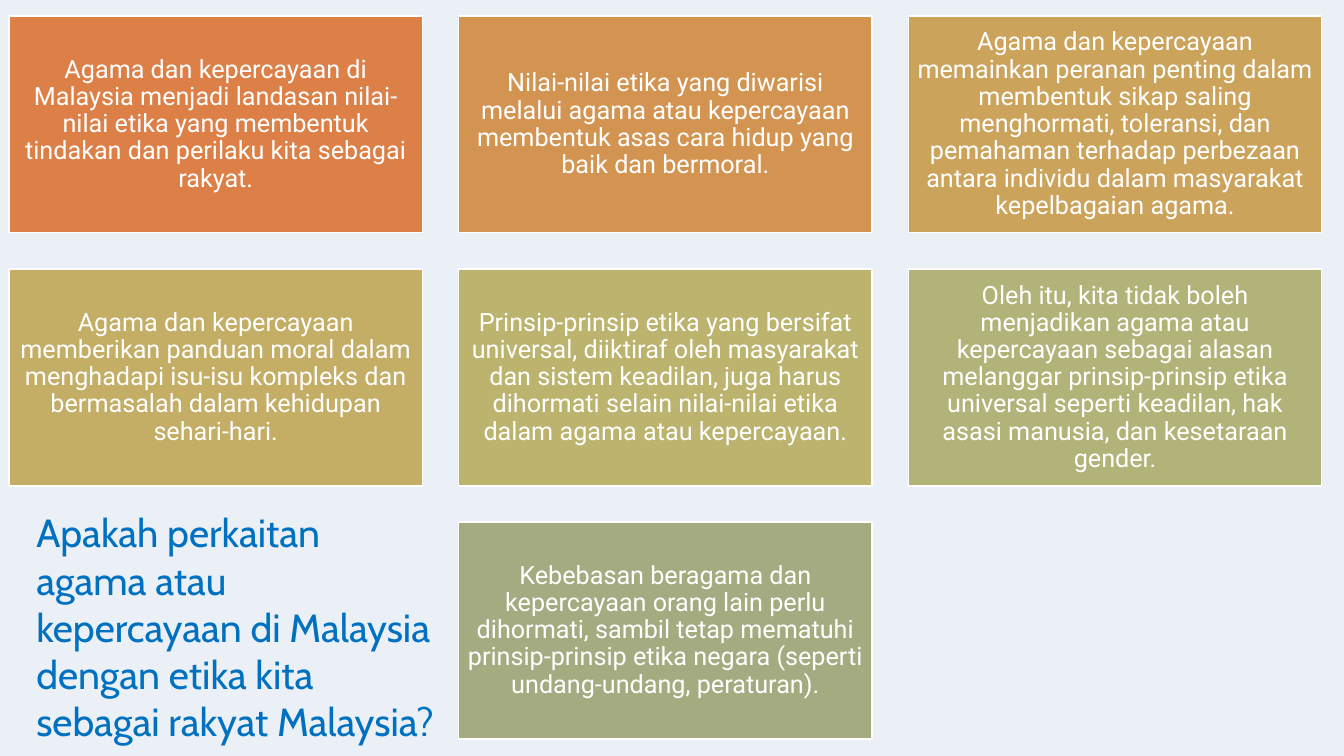
from dataclasses import dataclass

from pptx import Presentation
from pptx.dml.color import RGBColor
from pptx.enum.shapes import MSO_SHAPE
from pptx.enum.text import MSO_ANCHOR, MSO_AUTO_SIZE, PP_ALIGN
from pptx.util import Inches, Pt

RECT = MSO_SHAPE.RECTANGLE
MIDDLE = MSO_ANCHOR.MIDDLE
NO_AUTOFIT = MSO_AUTO_SIZE.NONE
LEFT, CENTER = PP_ALIGN.LEFT, PP_ALIGN.CENTER


@dataclass(frozen=True)
class Theme:
    background: str = "EAF0F6"
    white: str = "FFFFFF"
    title: str = "0070C0"
    cards: tuple = ("DD8047", "D49451", "CCA35B", "C4AD64", "BBB36E", "B2B378", "A5AB81")
    title_font: str = "Cabin"
    card_font: str = "Roboto"
    title_size: int = 28
    card_size: int = 18


theme = Theme()


def rgb(code):
    return RGBColor.from_string(code)


def format_text(sp, font, size, color, align, margins):
    """Style the shape's only paragraph; margins run left, top, right, bottom."""
    tf = sp.text_frame
    tf.word_wrap = True
    tf.auto_size = NO_AUTOFIT
    tf.vertical_anchor = MIDDLE
    tf.margin_left, tf.margin_top, tf.margin_right, tf.margin_bottom = map(Inches, margins)
    p = tf.paragraphs[0]
    p.alignment = align
    p.font.name = font
    p.font.size = Pt(size)
    p.font.color.rgb = rgb(color)
    return p


points = [
    "Agama dan kepercayaan di Malaysia menjadi landasan nilai-nilai etika yang membentuk "
    "tindakan dan perilaku kita sebagai rakyat.",
    "Nilai-nilai etika yang diwarisi melalui agama atau kepercayaan membentuk asas cara hidup "
    "yang baik dan bermoral.",
    "Agama dan kepercayaan memainkan peranan penting dalam membentuk sikap saling menghormati, "
    "toleransi, dan pemahaman terhadap perbezaan antara individu dalam masyarakat "
    "kepelbagaian agama.",
    "Agama dan kepercayaan memberikan panduan moral dalam menghadapi isu-isu kompleks dan "
    "bermasalah dalam kehidupan sehari-hari.",
    "Prinsip-prinsip etika yang bersifat universal, diiktiraf oleh masyarakat dan sistem "
    "keadilan, juga harus dihormati selain nilai-nilai etika dalam agama atau kepercayaan.",
    "Oleh itu, kita tidak boleh menjadikan agama atau kepercayaan sebagai alasan melanggar "
    "prinsip-prinsip etika universal seperti keadilan, hak asasi manusia, dan kesetaraan gender.",
    "Kebebasan beragama dan kepercayaan orang lain perlu dihormati, sambil tetap mematuhi "
    "prinsip-prinsip etika negara (seperti undang-undang, peraturan).",
]

prs = Presentation()
prs.slide_width = Inches(13.33)
prs.slide_height = Inches(7.5)
slide = prs.slides.add_slide(prs.slide_layouts[5])
slide.background.fill.solid()
slide.background.fill.fore_color.rgb = rgb(theme.background)

# Cards fill a three-column grid; the last one is centred in its row
COLUMNS = 3
GRID_LEFT, GRID_TOP = 0.09, 0.16
CARD_W, CARD_H, GAP = 4.1, 2.15, 0.36
for i, (text, color) in enumerate(zip(points, theme.cards)):
    row, col = divmod(i, COLUMNS)
    if i == len(points) - 1:
        col = 1
    sp = slide.shapes.add_shape(
        RECT,
        Inches(GRID_LEFT + col * (CARD_W + GAP)),
        Inches(GRID_TOP + row * (CARD_H + GAP)),
        Inches(CARD_W),
        Inches(CARD_H),
    )
    sp.shadow.inherit = False
    sp.fill.solid()
    sp.fill.fore_color.rgb = rgb(color)
    sp.line.color.rgb = rgb(theme.white)
    sp.line.width = Pt(1)
    sp.text_frame.text = text
    p = format_text(sp, theme.card_font, theme.card_size, theme.white, CENTER, [0.07] * 4)
    p.line_spacing = 0.9

# Question beside the last card
title = slide.shapes.title
title.left, title.top = Inches(-0.15), Inches(5.31)
title.width, title.height = Inches(4.6), Inches(1.89)
title.text_frame.text = (
    "Apakah perkaitan agama atau kepercayaan di Malaysia "
    "dengan etika kita sebagai rakyat Malaysia?"
)
format_text(title, theme.title_font, theme.title_size, theme.title, LEFT, [0.51, 0.16, 0.1, 0.24])

prs.save("out.pptx")
